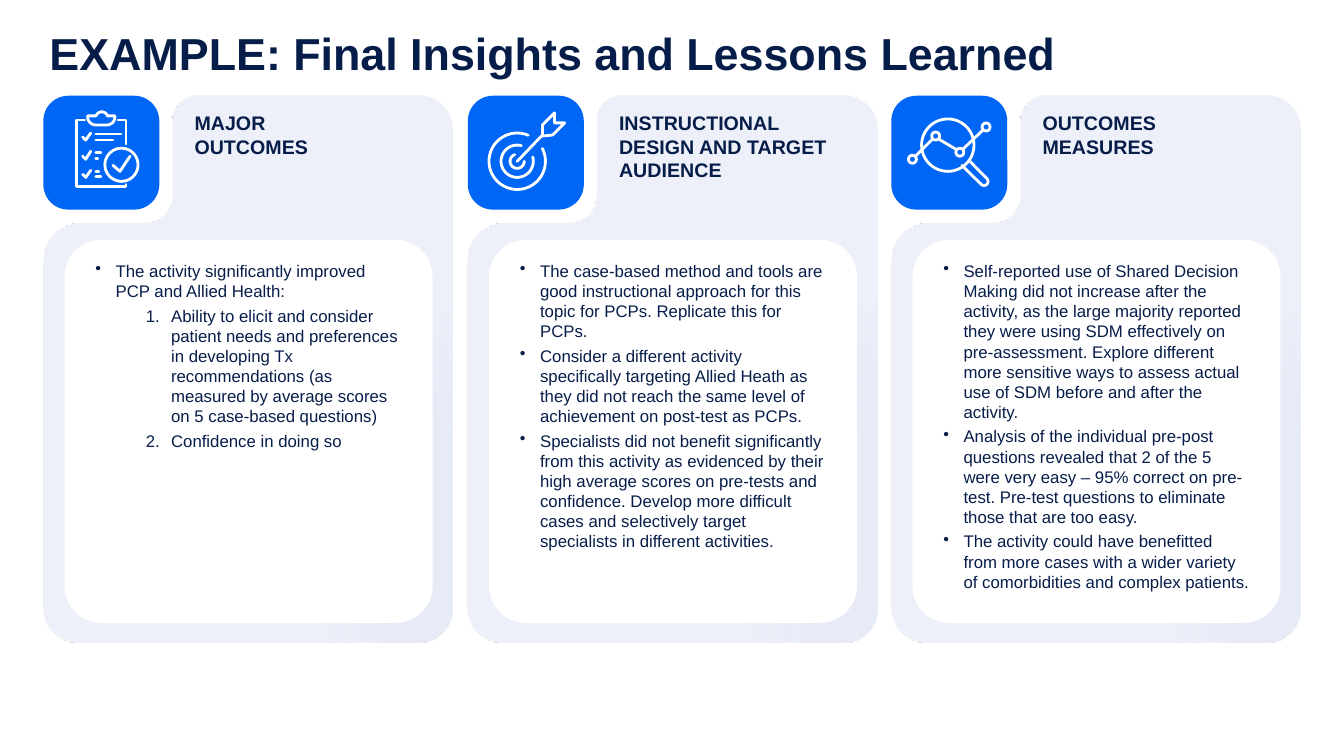
"""Build the slide on final insights and lessons learned."""
import math

import lxml.etree
import pptx
import pptx.dml.color
import pptx.enum.shapes
import pptx.enum.text
import pptx.oxml
import pptx.oxml.ns
import pptx.util

SCALE = 9144
NAVY = pptx.dml.color.RGBColor(0x07, 0x1D, 0x49)
BLUE = pptx.dml.color.RGBColor(0x00, 0x66, 0xF5)
WHITE = pptx.dml.color.RGBColor(0xFF, 0xFF, 0xFF)
FONT = "Arial"
SHAPES = pptx.enum.shapes.MSO_SHAPE
TITLE = "EXAMPLE: Final Insights and Lessons Learned"
BULLET = ("buChar", "char", "•", 20, 20, 0)
NUMBER = ("buAutoNum", "type", "arabicPeriod", 75, 25, 1)

CARDS = [
    {
        "left": 43,
        "heading": "MAJOR \nOUTCOMES",
        "body": [
            (BULLET, "The activity significantly improved PCP and Allied Health:"),
            (NUMBER, "Ability to elicit and consider patient needs and preferences in developing Tx "
                     "recommendations (as measured by average scores on 5 case-based questions)"),
            (NUMBER, "Confidence in doing so"),
        ],
        "circles": [(61, 52, 33)],
        "strokes": [
            [(74, 24), (82, 24), (82, 48)],
            [(82, 88), (82, 90), (33, 90), (33, 24), (41, 24)],
            [(52, 38), (77, 38)],
            [(52, 44), (69, 44)],
            [(52, 56), (57, 56)],
            [(52, 62), (54, 62)],
            [(52, 75), (55, 75)],
            [(52, 80), (57, 80)],
            [(58, 22, 6, -20, -160), (44, 20), (52, 21, 8, 180, 90), (63, 21, 8, 90, 0),
             (71, 20), (64, 20)],
            [(69, 69), (76, 75), (86, 60)],
            [(39, 41), (42, 44), (47, 37)],
            [(39, 60), (42, 63), (47, 55)],
            [(39, 78), (42, 81), (47, 74)],
        ],
    },
    {
        "left": 464,
        "heading": "INSTRUCTIONAL DESIGN AND TARGET AUDIENCE",
        "body": [
            (BULLET, "The case-based method and tools are good instructional approach for this "
                     "topic for PCPs. Replicate this for PCPs."),
            (BULLET, "Consider a different activity specifically targeting Allied Heath as they did "
                     "not reach the same level of achievement on post-test as PCPs."),
            (BULLET, "Specialists did not benefit significantly from this activity as evidenced by "
                     "their high average scores on pre-tests and confidence. Develop more difficult "
                     "cases and selectively target specialists in different activities."),
        ],
        "circles": [],
        "strokes": [
            [(49, 65, 28, -27, 293)],
            [(49, 65, 16, -15, 285)],
            [(49, 65, 7, 0, 250)],
            [(73, 40), (49, 65)],
            [(96, 27), (84, 39), (74, 40), (74, 29), (86, 17), (86, 27), (96, 27)],
        ],
    },
    {
        "left": 884,
        "heading": "OUTCOMES \nMEASURES",
        "body": [
            (BULLET, "Self-reported use of Shared Decision Making did not increase after the "
                     "activity, as the large majority reported they were using SDM effectively on "
                     "pre-assessment. Explore different more sensitive ways to assess actual use of "
                     "SDM before and after the activity."),
            (BULLET, "Analysis of the individual pre-post questions revealed that 2 of the 5 were "
                     "very easy – 95% correct on pre-test. Pre-test questions to eliminate those "
                     "that are too easy."),
            (BULLET, "The activity could have benefitted from more cases with a wider variety of "
                     "comorbidities and complex patients."),
        ],
        "circles": [(17, 59, 8), (40, 36, 8), (64, 52, 8), (90, 27, 8), (30, 23, 52)],
        "strokes": [
            [(24, 60), (41, 43)],
            [(47, 43), (64, 53)],
            [(71, 53), (91, 34)],
            [(70, 69), (92, 85, 4, 135, -45), (77, 64)],
        ],
    },
]
CARD_TOP = 95
CARD_OUTLINE = [(372, 34, 34, -90, 0), (372, 508, 34, 0, 90), (35, 507, 35, 90, 180),
                (38, 164, 38, 180, 270), (102, 100, 26, 90, 0), (153, 25, 25, 180, 270)]
CARD_GRADIENT = (
    f'<a:gradFill {pptx.oxml.ns.nsdecls("a")}><a:gsLst>'
    '<a:gs pos="24000"><a:srgbClr val="DBE1F3"><a:alpha val="65000"/></a:srgbClr></a:gs>'
    '<a:gs pos="100000"><a:srgbClr val="EDF0F9"/></a:gs></a:gsLst>'
    '<a:path path="rect"><a:fillToRect l="100000" t="100000"/></a:path></a:gradFill>')


def px(length):
    return pptx.util.Emu(round(length * SCALE))


def trace(outline):
    """Expand (cx, cy, r, start, end) arcs into points."""
    points = []
    for item in outline:
        if len(item) == 2:
            points.append(item)
            continue
        center_x, center_y, radius, start, end = item
        steps = max(8, round(abs(end - start) / 6))
        for step in range(steps + 1):
            angle = math.radians(start + (end - start) * step / steps)
            points.append((center_x + radius * math.cos(angle), center_y + radius * math.sin(angle)))
    return points


def add_outline(shapes, outline, left, close):
    points = [(px(left + x), px(CARD_TOP + y)) for x, y in trace(outline)]
    builder = shapes.build_freeform(*points[0], scale=1.0)
    builder.add_line_segments(points[1:], close=close)
    shape = builder.convert_to_shape()
    shape.shadow.inherit = False
    return shape


def add_rounded(shapes, left, top, width, height, radius, color):
    shape = shapes.add_shape(SHAPES.ROUNDED_RECTANGLE, px(left), px(top), px(width), px(height))
    shape.adjustments[0] = radius
    shape.shadow.inherit = False
    shape.fill.solid()
    shape.fill.fore_color.rgb = color
    shape.line.fill.background()
    return shape


def set_frame(shape, left, top, right, bottom, anchor=pptx.enum.text.MSO_ANCHOR.TOP):
    frame = shape.text_frame
    frame.word_wrap = True
    frame.auto_size = pptx.enum.text.MSO_AUTO_SIZE.NONE
    frame.vertical_anchor = anchor
    frame.margin_left, frame.margin_top = px(left), px(top)
    frame.margin_right, frame.margin_bottom = px(right), px(bottom)
    return frame


def add_text(paragraph, text, size, bold):
    paragraph.alignment = pptx.enum.text.PP_ALIGN.LEFT
    for index, line in enumerate(text.split("\n")):
        if index:
            paragraph.add_line_break()
        run = paragraph.add_run()
        run.text = line
        run.font.name, run.font.size, run.font.bold = FONT, pptx.util.Pt(size), bold
        run.font.color.rgb = NAVY


def add_item(paragraph, style, text):
    tag, attribute, value, margin, hanging, level = style
    paragraph.level = level
    paragraph.space_after = pptx.util.Pt(3)
    properties = paragraph._p.get_or_add_pPr()
    properties.set("marL", str(px(margin)))
    properties.set("indent", str(-px(hanging)))
    lxml.etree.SubElement(properties, pptx.oxml.ns.qn(f"a:{tag}")).set(attribute, value)
    add_text(paragraph, text, 12, False)


def style_stroke(shape):
    shape.line.color.rgb = WHITE
    shape.line.width = pptx.util.Pt(2)
    line = shape._element.spPr.find(pptx.oxml.ns.qn("a:ln"))
    line.set("cap", "rnd")
    lxml.etree.SubElement(line, pptx.oxml.ns.qn("a:round"))


def add_icon(shapes, card):
    left = card["left"]
    for outline in card["strokes"]:
        if len(outline) == 2:
            (x1, y1), (x2, y2) = outline
            shape = shapes.add_connector(
                pptx.enum.shapes.MSO_CONNECTOR.STRAIGHT, px(left + x1), px(CARD_TOP + y1),
                px(left + x2), px(CARD_TOP + y2))
            style_stroke(shape)
            lxml.etree.SubElement(shape._element.spPr, pptx.oxml.ns.qn("a:effectLst"))
        else:
            shape = add_outline(shapes, outline, left, len(outline) > 5)
            shape.fill.background()
            style_stroke(shape)
    for x, y, size in card["circles"]:
        shape = shapes.add_shape(SHAPES.OVAL, px(left + x), px(CARD_TOP + y), px(size), px(size))
        shape.shadow.inherit = False
        shape.fill.background()
        style_stroke(shape)


def add_card(slide, card):
    shapes = slide.shapes.add_group_shape().shapes
    left = card["left"]
    panel = add_outline(shapes, CARD_OUTLINE, left, True)
    panel.line.fill.background()
    panel.fill.background()
    properties = panel._element.spPr
    properties.replace(properties.find(pptx.oxml.ns.qn("a:noFill")), pptx.oxml.parse_xml(CARD_GRADIENT))
    add_text(set_frame(panel, 150, 15, 20, 0).paragraphs[0], card["heading"], 14, True)
    body = add_rounded(shapes, left + 21, 238, 365, 380, 0.1, WHITE)
    frame = set_frame(body, 20, 10, 20, 10)
    for index, (style, text) in enumerate(card["body"]):
        add_item(frame.add_paragraph() if index else frame.paragraphs[0], style, text)
    add_rounded(shapes, left, CARD_TOP, 115, 113, 0.22, BLUE)
    add_icon(shapes, card)


def main():
    presentation = pptx.Presentation()
    presentation.slide_width, presentation.slide_height = px(1333), px(750)
    slide = presentation.slides.add_slide(presentation.slide_layouts[5])
    title = slide.shapes.title
    title.left, title.top, title.width, title.height = px(49), px(35), px(1078), px(42)
    paragraph = set_frame(title, 0, 0, 0, 0, pptx.enum.text.MSO_ANCHOR.MIDDLE).paragraphs[0]
    paragraph.line_spacing = 0.85
    add_text(paragraph, TITLE, 32, True)
    for card in CARDS:
        add_card(slide, card)
    presentation.save("out.pptx")


if __name__ == "__main__":
    main()
